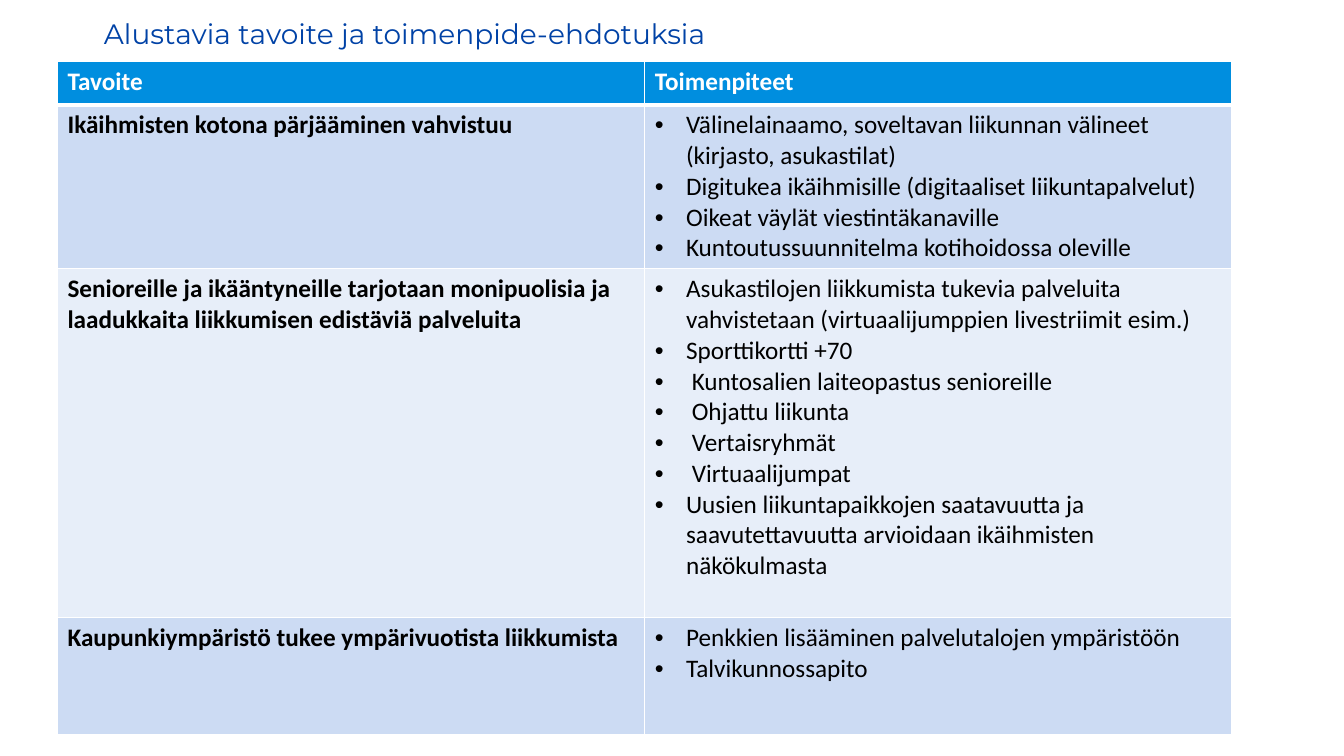
from lxml import etree
from pptx import Presentation
from pptx.dml.color import RGBColor
from pptx.enum.text import MSO_ANCHOR, MSO_AUTO_SIZE, PP_ALIGN
from pptx.oxml.ns import qn
from pptx.util import Emu, Inches, Pt

TOP, LEFT = MSO_ANCHOR.TOP, PP_ALIGN.LEFT
NO_FIT = MSO_AUTO_SIZE.NONE

TITLE_BLUE = RGBColor(0x00, 0x42, 0xA6)
HEADER_BLUE = RGBColor(0x00, 0x8E, 0xDF)
BAND_DARK = RGBColor(0xCC, 0xDB, 0xF3)
BAND_LIGHT = RGBColor(0xE7, 0xEE, 0xF9)
WHITE = RGBColor(0xFF, 0xFF, 0xFF)
BLACK = RGBColor(0x00, 0x00, 0x00)

TITLE_BOX = (0.93, 0.15, 7.04, 0.45)
TABLE_BOX = (0.57, 0.61, 11.65, 6.66)
ROW_HEIGHTS = (0.43, 1.61, 3.46, 1.16)
BULLET_INDENT = Inches(0.31)

TITLE = "Alustavia tavoite ja toimenpide-ehdotuksia"
HEADERS = ("Tavoite", "Toimenpiteet")
GOALS = [
    ("Ikäihmisten kotona pärjääminen vahvistuu", [
        "Välinelainaamo, soveltavan liikunnan välineet (kirjasto, asukastilat)",
        "Digitukea ikäihmisille (digitaaliset liikuntapalvelut)",
        "Oikeat väylät viestintäkanaville",
        "Kuntoutussuunnitelma kotihoidossa oleville",
    ]),
    ("Senioreille ja ikääntyneille tarjotaan monipuolisia ja laadukkaita "
     "liikkumisen edistäviä palveluita", [
        "Asukastilojen liikkumista tukevia palveluita vahvistetaan "
        "(virtuaalijumppien livestriimit esim.)",
        "Sporttikortti +70",
        " Kuntosalien laiteopastus senioreille",
        " Ohjattu liikunta",
        " Vertaisryhmät",
        " Virtuaalijumpat",
        "Uusien liikuntapaikkojen saatavuutta ja saavutettavuutta arvioidaan "
        "ikäihmisten näkökulmasta",
    ]),
    ("Kaupunkiympäristö tukee ympärivuotista liikkumista", [
        "Penkkien lisääminen palvelutalojen ympäristöön",
        "Talvikunnossapito",
    ]),
]


def add_run(p, text, color, **formats):
    r = p.add_run()
    r.text = text
    for name, value in formats.items():
        setattr(r.font, name, value)
    r.font.color.rgb = color


def add_bullet(p):
    pPr = p._p.get_or_add_pPr()
    pPr.set("marL", str(BULLET_INDENT))
    pPr.set("indent", str(-BULLET_INDENT))
    etree.SubElement(pPr, qn("a:buFont")).set("typeface", "Arial")
    etree.SubElement(pPr, qn("a:buChar")).set("char", "•")


def set_borders(cell, widths):
    """Draw white borders; widths maps the sides L, R, T, B to points."""
    tcPr = cell._tc.get_or_add_tcPr()
    for side, width in widths.items():
        ln = etree.SubElement(tcPr, qn(f"a:ln{side}"), w=str(Pt(width)))
        fill = etree.SubElement(ln, qn("a:solidFill"))
        etree.SubElement(fill, qn("a:srgbClr")).set("val", str(WHITE))


def fill_cell(cell, lines, fill, color=BLACK, bold=False, bullets=False,
              top=1, bottom=1):
    set_borders(cell, {"L": 1, "R": 1, "T": top, "B": bottom})
    cell.fill.solid()
    cell.fill.fore_color.rgb = fill
    tf = cell.text_frame
    for i, line in enumerate(lines):
        p = tf.add_paragraph() if i else tf.paragraphs[0]
        if bullets:
            add_bullet(p)
        add_run(p, line, color, name="Calibri", size=Pt(18), bold=bold)


def add_title(s, box):
    title = s.shapes.title
    title.left, title.top, title.width, title.height = map(Inches, box)
    tf = title.text_frame
    formats = {"vertical_anchor": TOP, "word_wrap": True, "auto_size": NO_FIT}
    for name, value in formats.items():
        setattr(tf, name, value)
    p = tf.paragraphs[0]
    p.alignment, p.line_spacing = LEFT, 0.9
    add_run(p, TITLE, TITLE_BLUE, name="Montserrat", size=Pt(20))


def add_goal_table(s, box):
    x, y, w, h = map(Inches, box)
    table = s.shapes.add_table(len(GOALS) + 1, len(HEADERS), x, y, w, h).table
    for col in table.columns:
        col.width = Emu(w // len(HEADERS))
    for row, height in zip(table.rows, ROW_HEIGHTS):
        row.height = Inches(height)

    for c, header in enumerate(HEADERS):
        fill_cell(table.cell(0, c), [header], HEADER_BLUE, WHITE, bold=True,
                  bottom=3)
    for i, (goal, actions) in enumerate(GOALS, start=1):
        band = BAND_DARK if i % 2 else BAND_LIGHT
        top = 3 if i == 1 else 1
        fill_cell(table.cell(i, 0), [goal], band, bold=True, top=top)
        fill_cell(table.cell(i, 1), actions, band, bullets=True, top=top)


def main():
    prs = Presentation()
    prs.slide_width, prs.slide_height = Inches(13.33), Inches(7.5)
    s = prs.slides.add_slide(prs.slide_layouts[5])
    add_title(s, TITLE_BOX)
    add_goal_table(s, TABLE_BOX)
    prs.save("out.pptx")


if __name__ == "__main__":
    main()
